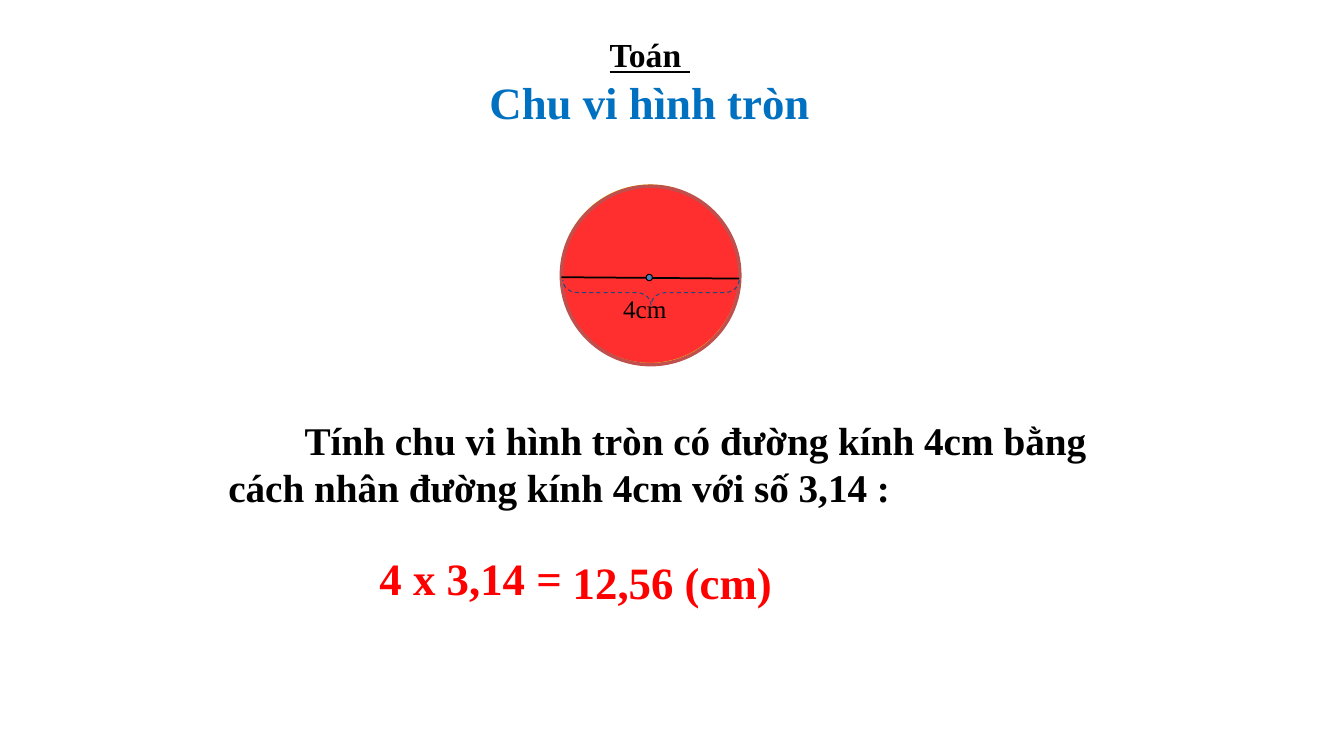
import pptx
import pptx.util
import pptx.dml.color
import pptx.enum.dml
import pptx.enum.shapes
import pptx.enum.text
import pptx.oxml.ns
import lxml.etree

Pt = pptx.util.Pt
RGBColor = pptx.dml.color.RGBColor
SHAPES = pptx.enum.shapes.MSO_SHAPE

BLACK = RGBColor(0x00, 0x00, 0x00)
RED = RGBColor(0xFF, 0x00, 0x00)
TITLE_BLUE = RGBColor(0x00, 0x70, 0xC0)
DISC_RED = RGBColor(0xFF, 0x2F, 0x2F)
YELLOW = RGBColor(0xFF, 0xFF, 0x00)
RIM_RED = RGBColor(0xC0, 0x50, 0x4D)
DOT_BLUE = RGBColor(0x4F, 0x81, 0xBD)
BRACE_BLUE = RGBColor(0x1F, 0x49, 0x7D)

deck = pptx.Presentation()
deck.slide_width = Pt(960)
deck.slide_height = Pt(540)
page = deck.slides.add_slide(deck.slide_layouts[6])


def add_outlined(kind, left, top, width, height, fill, line, weight):
    """Add a preset shape; a fill of None leaves it hollow."""
    shape = page.shapes.add_shape(kind, Pt(left), Pt(top), Pt(width), Pt(height))
    shape.shadow.inherit = False
    if fill is None:
        shape.fill.background()
    else:
        shape.fill.solid()
        shape.fill.fore_color.rgb = fill
    shape.line.color.rgb = line
    shape.line.width = Pt(weight)
    return shape


def add_text(left, top, width, height, lines):
    """Add a text box; each line is (text, size, colour, bold)."""
    box = page.shapes.add_textbox(Pt(left), Pt(top), Pt(width), Pt(height))
    frame = box.text_frame
    frame.word_wrap = True
    frame.text = "\n".join(line[0] for line in lines)
    for para, (_, size, colour, bold) in zip(frame.paragraphs, lines):
        font = para.runs[0].font
        font.name = "Times New Roman"
        font.size = Pt(size)
        font.color.rgb = colour
        font.bold = bold
    return frame


# Circle with its diameter
add_outlined(SHAPES.OVAL, 400.5, 132, 127.5, 127.5, DISC_RED, YELLOW, 0.5)
add_outlined(SHAPES.OVAL, 401, 133, 127.5, 127.5, None, RIM_RED, 2.5)

diameter = page.shapes.add_connector(
    pptx.enum.shapes.MSO_CONNECTOR.STRAIGHT, Pt(401), Pt(198), Pt(528), Pt(199))
diameter.line.color.rgb = BLACK
diameter.line.width = Pt(1.25)
lxml.etree.SubElement(diameter._element.spPr, pptx.oxml.ns.qn("a:effectLst"))

add_text(438, 206, 60, 29, [("4cm", 18, BLACK, False)])
add_outlined(SHAPES.OVAL, 461.5, 196, 4.5, 4.5, DOT_BLUE, BLACK, 0.75)

brace = add_outlined(SHAPES.RIGHT_BRACE, 456, 146, 18, 126, None, BRACE_BLUE, 0.75)
brace.rotation = 90
brace.adjustments[0] = 0.583
brace.line.dash_style = pptx.enum.dml.MSO_LINE.DASH

# Rule and worked example
rule = add_text(156, 294, 648, 75, [
    ("Tính chu vi hình tròn có đường kính 4cm bằng cách nhân đường kính 4cm với số 3,14 :",
     28, BLACK, True)])
rule.paragraphs[0]._p.get_or_add_pPr().set("indent", str(Pt(54.5)))
add_text(264, 390, 180, 46, [("4 x 3,14 =", 32, RED, True)])
add_text(402, 392.5, 198, 46, [("12,56 (cm)", 32, RED, True)])

# Heading
heading = add_text(272, 21, 384, 72, [
    ("Toán ", 24, BLACK, True),
    ("Chu vi hình tròn", 32, TITLE_BLUE, True)])
for para in heading.paragraphs:
    para.alignment = pptx.enum.text.PP_ALIGN.CENTER
heading.paragraphs[0].runs[0].font.underline = True

deck.save("out.pptx")
